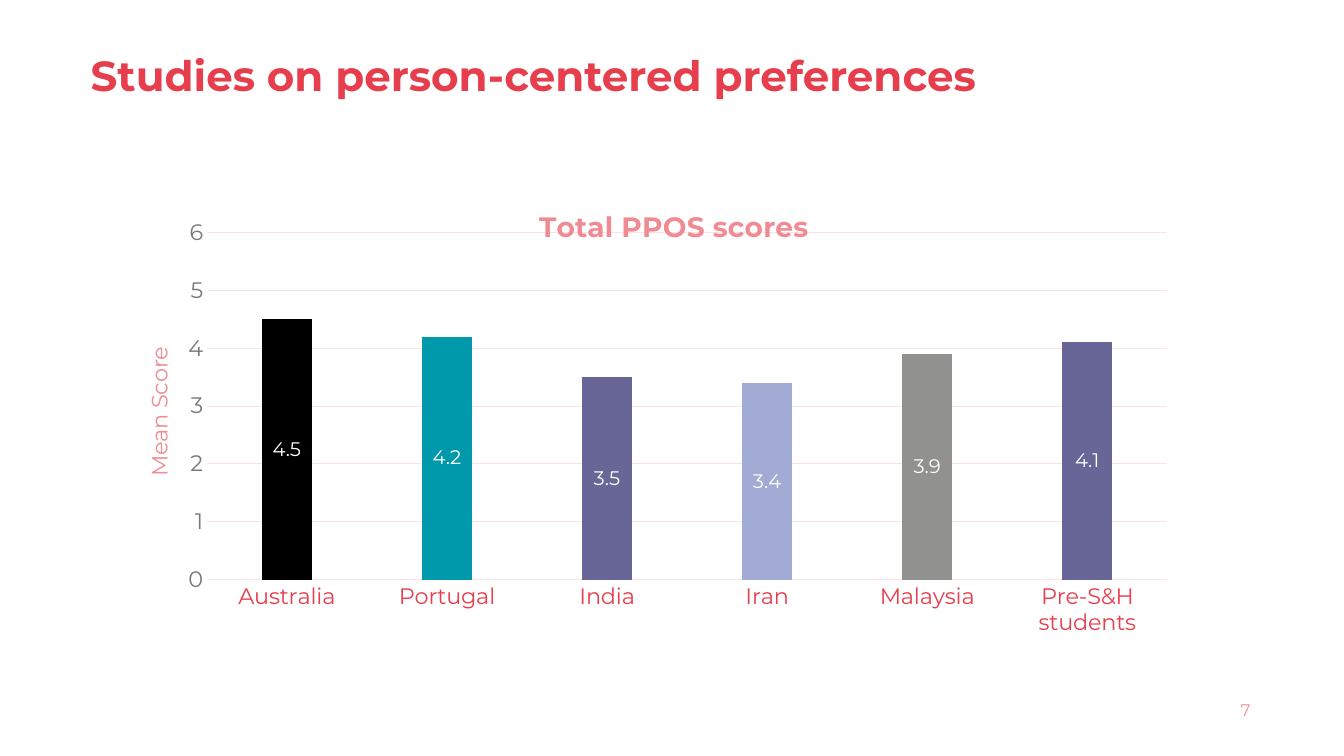
import dataclasses
import lxml.etree
import pptx
import pptx.chart.data
import pptx.dml.color
import pptx.enum.chart
import pptx.enum.text
import pptx.oxml.ns
import pptx.util


@dataclasses.dataclass(frozen=True)
class Theme:
    face: str = "Montserrat"
    red: str = "E63E4D"
    rose: str = "F08B94"
    blush: str = "FBE2E4"
    pale: str = "ED9297"
    grey: str = "797977"
    white: str = "FFFFFF"
    teal: str = "0099AC"
    head: int = 30
    chart: int = 20
    axis: int = 16
    label: int = 14
    page: int = 12
    line: float = 0.75


@dataclasses.dataclass(frozen=True)
class Box:
    col: float
    row: float
    cols: float
    rows: float


@dataclasses.dataclass(frozen=True)
class Bar:
    group: str
    score: float
    color: str


THEME = Theme()
WIDTH = pptx.util.Inches(13.33)
HEIGHT = pptx.util.Inches(7.5)
GRID = 100
HEAD = Box(6, 7.87, 85.3, 4.93)
CHART = Box(9.6, 23.87, 80.57, 61.87)
PAGE = Box(71.27, 91.2, 22.51, 5.33)
PLOT = Box(7.2, 11.1, 88.7, 74.3)
BARS = [
    Bar("Australia", 4.5, "000000"),
    Bar("Portugal", 4.2, THEME.teal),
    Bar("India", 3.5, "676696"),
    Bar("Iran", 3.4, "A1ABD3"),
    Bar("Malaysia", 3.9, "91918F"),
    Bar("Pre-S&H students", 4.1, "676696"),
]


def rgb(color: str) -> pptx.dml.color.RGBColor:
    return pptx.dml.color.RGBColor.from_string(color)


def place(box: Box) -> tuple[int, int, int, int]:
    return (
        round(WIDTH * box.col / GRID),
        round(HEIGHT * box.row / GRID),
        round(WIDTH * box.cols / GRID),
        round(HEIGHT * box.rows / GRID),
    )


def style(font, size: int, color: str, bold: bool = False) -> None:
    font.name = THEME.face
    font.size = pptx.util.Pt(size)
    font.bold = bold
    font.color.rgb = rgb(color)


def write(frame, text: str, size: int, color: str, bold: bool = False) -> None:
    frame.text = text
    style(frame.paragraphs[0].runs[0].font, size, color, bold)


def pin(parent, index: int, marks: dict[str, str | float]) -> None:
    name = pptx.oxml.ns.qn
    for old in parent.findall(name("c:layout")):
        parent.remove(old)
    layout = lxml.etree.Element(name("c:layout"))
    manual = lxml.etree.SubElement(layout, name("c:manualLayout"))
    for tag, value in marks.items():
        lxml.etree.SubElement(manual, name(f"c:{tag}")).set("val", str(value))
    parent.insert(index, layout)


def caption(title, text: str, size: int, bold: bool, col: float, row: float) -> None:
    write(title.text_frame, text, size, THEME.rose, bold)
    pin(title._element, 1, {
        "xMode": "edge", "yMode": "edge", "x": col / GRID, "y": row / GRID,
    })


def rule(line) -> None:
    line.color.rgb = rgb(THEME.blush)
    line.width = pptx.util.Pt(THEME.line)


def add_head(slide) -> None:
    head = slide.shapes.title
    head.left, head.top, head.width, head.height = place(HEAD)
    frame = head.text_frame
    write(frame, "Studies on person-centered preferences", THEME.head, THEME.red, True)
    frame.auto_size = pptx.enum.text.MSO_AUTO_SIZE.NONE
    frame.vertical_anchor = pptx.enum.text.MSO_ANCHOR.MIDDLE
    frame.paragraphs[0].alignment = pptx.enum.text.PP_ALIGN.LEFT
    frame.paragraphs[0].line_spacing = 0.9


def add_page(slide) -> None:
    frame = slide.shapes.add_textbox(*place(PAGE)).text_frame
    frame.word_wrap = True
    write(frame, "7", THEME.page, THEME.pale)
    frame.vertical_anchor = pptx.enum.text.MSO_ANCHOR.MIDDLE
    frame.paragraphs[0].alignment = pptx.enum.text.PP_ALIGN.RIGHT


def set_axes(chart) -> None:
    groups, scores = chart.category_axis, chart.value_axis
    for axis, color in ((groups, THEME.red), (scores, THEME.grey)):
        style(axis.tick_labels.font, THEME.axis, color)
        axis.major_tick_mark = pptx.enum.chart.XL_TICK_MARK.NONE
        axis.minor_tick_mark = pptx.enum.chart.XL_TICK_MARK.NONE
    rule(groups.format.line)
    scores.format.line.fill.background()
    scores.minimum_scale, scores.maximum_scale = 0, 6
    scores.major_unit = 1
    scores.has_major_gridlines = True
    rule(scores.major_gridlines.format.line)
    caption(scores.axis_title, "Mean Score", THEME.axis, False, 1, 34.7)


def add_bars(slide) -> None:
    data = pptx.chart.data.CategoryChartData(number_format="0.0")
    data.categories = [bar.group for bar in BARS]
    data.add_series("Series 1", [bar.score for bar in BARS])
    kind = pptx.enum.chart.XL_CHART_TYPE.COLUMN_CLUSTERED
    chart = slide.shapes.add_chart(kind, *place(CHART), data).chart
    style(chart.font, 10, THEME.red)
    chart.has_legend = False
    caption(chart.chart_title, "Total PPOS scores", THEME.chart, True, 37.4, 4.5)
    set_axes(chart)
    scores = chart.value_axis.tick_labels
    scores.number_format, scores.number_format_is_linked = "0", False

    plot = chart.plots[0]
    plot.gap_width, plot.overlap = 219, -27
    plot.vary_by_categories = False
    series = plot.series[0]
    series.format.fill.solid()
    series.format.fill.fore_color.rgb = rgb(THEME.teal)
    for index, bar in enumerate(BARS):
        fill = series.points[index].format.fill
        fill.solid()
        fill.fore_color.rgb = rgb(bar.color)
    labels = series.data_labels
    labels.show_value = True
    labels.position = pptx.enum.chart.XL_LABEL_POSITION.CENTER
    style(labels.font, THEME.label, THEME.white)

    area = chart._chartSpace.chart.plotArea
    pin(area, 0, {
        "layoutTarget": "inner", "xMode": "edge", "yMode": "edge",
        "x": PLOT.col / GRID, "y": PLOT.row / GRID,
        "w": PLOT.cols / GRID, "h": PLOT.rows / GRID,
    })


def main() -> None:
    deck = pptx.Presentation()
    deck.slide_width, deck.slide_height = WIDTH, HEIGHT
    slide = deck.slides.add_slide(deck.slide_layouts[5])
    add_bars(slide)
    add_page(slide)
    add_head(slide)
    deck.save("out.pptx")


if __name__ == "__main__":
    main()
